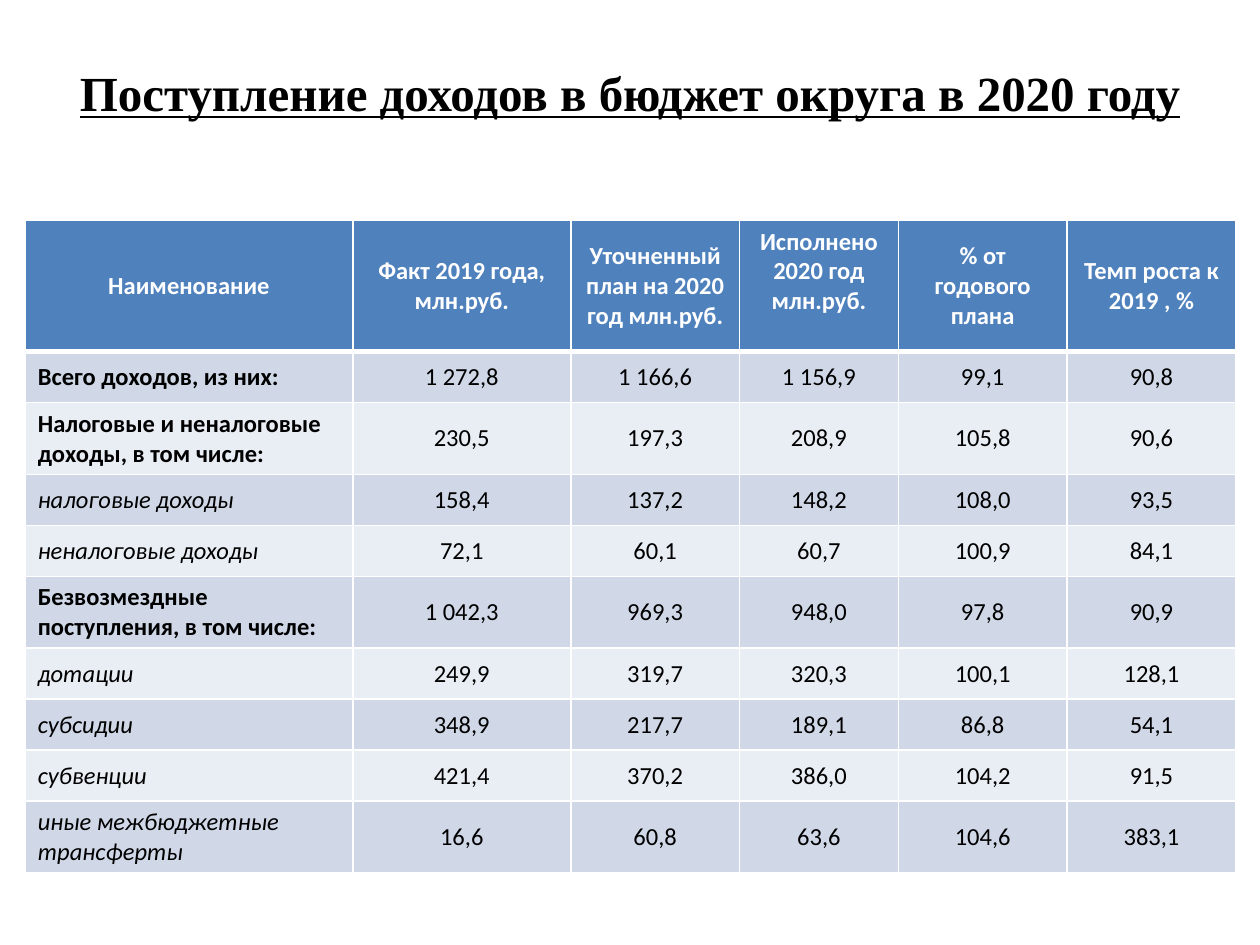
from pptx import Presentation
from pptx.dml.color import RGBColor
from pptx.enum.text import MSO_ANCHOR, PP_ALIGN
from pptx.oxml import parse_xml
from pptx.oxml.ns import nsdecls
from pptx.util import Inches, Pt

MIDDLE = MSO_ANCHOR.MIDDLE
LEFT, CENTER = PP_ALIGN.LEFT, PP_ALIGN.CENTER

TITLE = "Поступление доходов в бюджет округа в 2020 году"
HEADS = [
    "Наименование",
    "Факт 2019 года, млн.руб.",
    "Уточненный план на 2020 год млн.руб.",
    "Исполнено 2020 год млн.руб.",
    "% от годового плана",
    "Темп роста к 2019 , %",
]
TOTALS = "total"
PARTS = "part"
ROWS = [
    (TOTALS, "Всего доходов, из них:", "1 272,8", "1 166,6", "1 156,9", "99,1", "90,8"),
    (TOTALS, "Налоговые и неналоговые доходы, в том числе:", "230,5", "197,3", "208,9", "105,8", "90,6"),
    (PARTS, "налоговые доходы", "158,4", "137,2", "148,2", "108,0", "93,5"),
    (PARTS, "неналоговые доходы", "72,1", "60,1", "60,7", "100,9", "84,1"),
    (TOTALS, "Безвозмездные поступления, в том числе:", "1 042,3", "969,3", "948,0", "97,8", "90,9"),
    (PARTS, "дотации", "249,9", "319,7", "320,3", "100,1", "128,1"),
    (PARTS, "субсидии", "348,9", "217,7", "189,1", "86,8", "54,1"),
    (PARTS, "субвенции", "421,4", "370,2", "386,0", "104,2", "91,5"),
    (PARTS, "иные межбюджетные трансферты", "16,6", "60,8", "63,6", "104,6", "383,1"),
]
WIDTHS = [2.6, 1.73, 1.34, 1.26, 1.34, 1.34]
HEAD_H, ONE_H, TWO_H = 1.03, 0.405, 0.57
LONG = 22
DONE_COL, DONE_PAD = 3, 0.29

THEME = {
    "head": "4F81BD",
    "bands": ("D0D8E8", "E9EDF4"),
    "rule": "FFFFFF",
    "title": {"name": "Times New Roman", "size": Pt(28), "bold": True, "underline": True},
    "cell": {"name": "Calibri", "size": Pt(14), "bold": False, "italic": False},
    "dark": "000000",
    "light": "FFFFFF",
}
STYLES = {TOTALS: {"bold": True}, PARTS: {"italic": True}}


def write(frame, text, style, color, align):
    """Put one formatted paragraph into a text frame."""
    para = frame.paragraphs[0]
    para.alignment = align
    run = para.add_run()
    run.text = text
    for key, value in style.items():
        setattr(run.font, key, value)
    run.font.color.rgb = RGBColor.from_string(color)


def border(cell, top, bottom):
    """Draw the four cell rules, with widths in points."""
    props = cell._tc.get_or_add_tcPr()
    for side, width in zip("LRTB", (1, 1, top, bottom)):
        props.append(parse_xml(
            f'<a:ln{side} {nsdecls("a")} w="{Pt(width)}"><a:solidFill>'
            f'<a:srgbClr val="{THEME["rule"]}"/></a:solidFill></a:ln{side}>'))


def fill_cell(cell, text, fill, color, align, extra, rules):
    """Write, rule and shade one table cell."""
    cell.vertical_anchor = MIDDLE
    write(cell.text_frame, text, THEME["cell"] | extra, color, align)
    border(cell, *rules)
    cell.fill.solid()
    cell.fill.fore_color.rgb = RGBColor.from_string(fill)


def add_title(slide):
    """Add the underlined heading."""
    box = slide.shapes.add_textbox(Inches(0.5), Inches(0.21), Inches(9), Inches(1.04))
    frame = box.text_frame
    frame.word_wrap = True
    frame.vertical_anchor = MIDDLE
    write(frame, TITLE, THEME["title"], THEME["dark"], CENTER)


def add_grid(slide):
    """Add the income table."""
    heights = [HEAD_H] + [TWO_H if len(row[1]) > LONG else ONE_H for row in ROWS]
    table = slide.shapes.add_table(
        len(heights), len(WIDTHS), Inches(0.2), Inches(1.75),
        Inches(sum(WIDTHS)), Inches(sum(heights))).table
    for col, width in zip(table.columns, WIDTHS):
        col.width = Inches(width)
    for line, height in zip(table.rows, heights):
        line.height = Inches(height)
    for c, text in enumerate(HEADS):
        fill_cell(table.cell(0, c), text, THEME["head"], THEME["light"],
                  CENTER, {"bold": True}, (1, 3))
    table.cell(0, DONE_COL).margin_bottom = Inches(DONE_PAD)
    for r, (kind, *texts) in enumerate(ROWS, 1):
        band = THEME["bands"][(r - 1) % 2]
        rules = (3 if r == 1 else 1, 1)
        for c, text in enumerate(texts):
            align, extra = (CENTER, {}) if c else (LEFT, STYLES[kind])
            fill_cell(table.cell(r, c), text, band, THEME["dark"], align, extra, rules)


def main():
    """Build and save the slide."""
    deck = Presentation()
    deck.slide_width, deck.slide_height = Inches(10), Inches(7.5)
    slide = deck.slides.add_slide(deck.slide_layouts[6])
    add_title(slide)
    add_grid(slide)
    deck.save("out.pptx")


if __name__ == "__main__":
    main()
